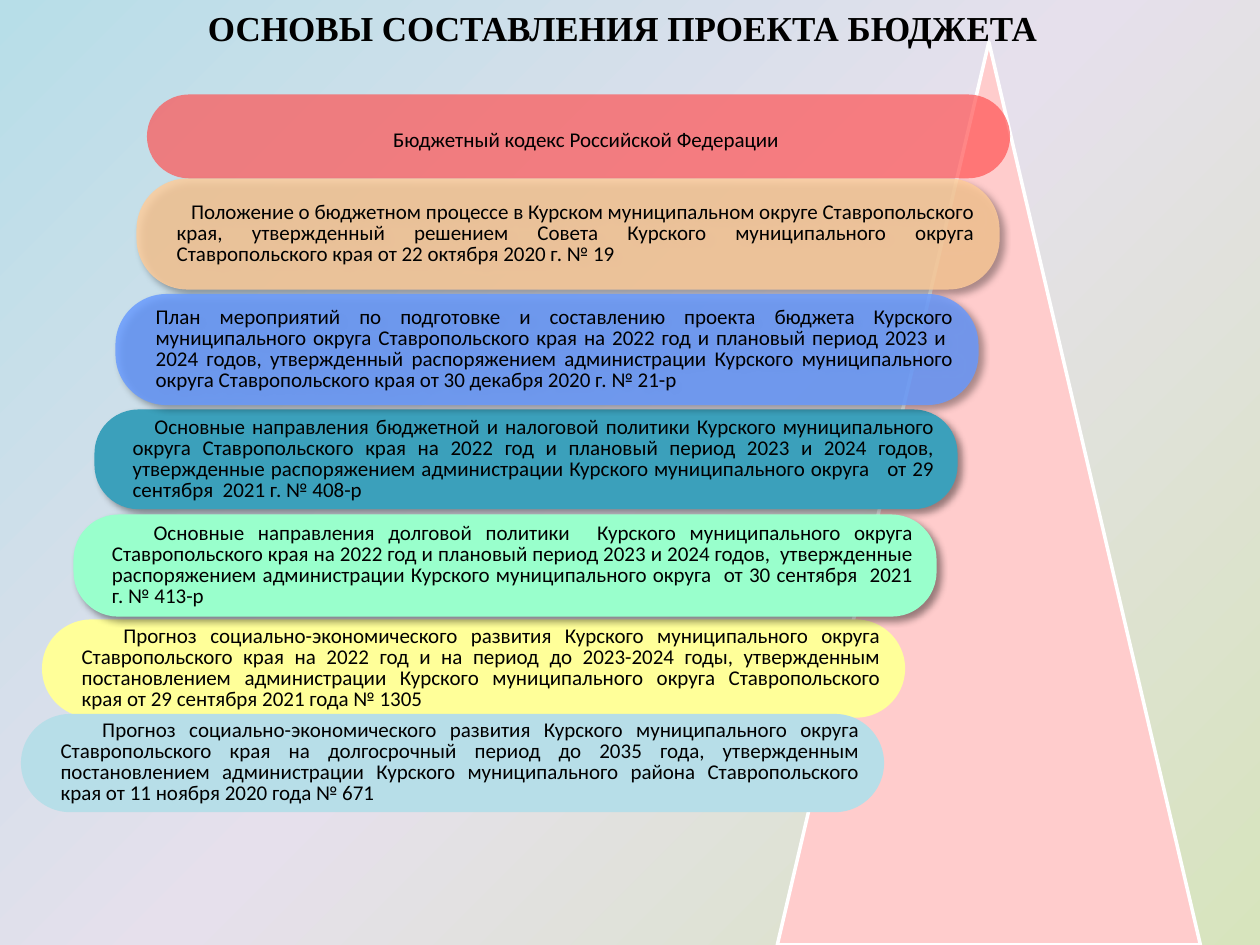
from dataclasses import dataclass

import pptx
import pptx.dml.color
import pptx.enum.shapes
import pptx.enum.text
import pptx.oxml
import pptx.oxml.ns
import pptx.util
from pptx.util import Cm, Pt

ALIGN = pptx.enum.text.PP_ALIGN
ANCHOR = pptx.enum.text.MSO_ANCHOR
SHAPE = pptx.enum.shapes.MSO_SHAPE
GRID = Cm(2.54) / 12


@dataclass(frozen=True)
class Theme:
    title_font: str = "Times New Roman"
    body_font: str = "Calibri"
    title_size: int = 20
    body_size: int = 12
    text: str = "000000"
    triangle: str = "FFCCCC"
    triangle_line: str = "FFFFFF"
    background: tuple = ((0, "D7E4BD"), (50, "E6E0EC"), (100, "B7DEE8"))


@dataclass(frozen=True)
class Bar:
    """Column and row count grid steps; height and indent are in centimetres."""
    column: int
    row: int
    height: float
    rounding: float
    color: str
    text: str
    indent: float = 0.84
    opacity: int = 100
    shadow: bool = False
    align: ALIGN = ALIGN.JUSTIFY
    line_spacing: int = 12


THEME = Theme()

BARS = (
    Bar(4, 59, 1.98, 0.5, "FFFF99",
        "Прогноз социально-экономического развития Курского муниципального округа "
        "Ставропольского края на 2022 год и на период до 2023-2024 годы, утвержденным "
        "постановлением администрации Курского муниципального округа Ставропольского "
        "края от 29 сентября 2021 года № 1305"),
    Bar(13, 17, 2.24, 0.46, "FFCC99",
        "Положение о бюджетном процессе в Курском муниципальном округе Ставропольского "
        "края, утвержденный решением Совета Курского муниципального округа "
        "Ставропольского края от 22 октября 2020 г. № 19",
        indent=0.29, opacity=82, shadow=True),
    Bar(14, 9, 1.69, 0.5, "FF5050", "Бюджетный кодекс Российской Федерации",
        indent=0, opacity=69, align=ALIGN.CENTER, line_spacing=17),
    Bar(9, 39, 2.01, 0.44, "3BA0BB",
        "Основные направления бюджетной и налоговой политики Курского муниципального "
        "округа Ставропольского края на 2022 год и плановый период 2023 и 2024 годов, "
        "утвержденные распоряжением администрации Курского муниципального округа   "
        "от 29 сентября  2021 г. № 408-р",
        indent=0.44, shadow=True),
    Bar(7, 49, 2.06, 0.44, "99FFCC",
        "Основные направления долговой политики  Курского муниципального округа "
        "Ставропольского края на 2022 год и плановый период 2023 и 2024 годов,  "
        "утвержденные распоряжением администрации Курского муниципального округа  "
        "от 30 сентября  2021 г. № 413-р",
        shadow=True),
    Bar(11, 28, 2.24, 0.46, "6699FF",
        "План мероприятий по подготовке и составлению проекта бюджета Курского "
        "муниципального округа Ставропольского края на 2022 год и плановый период "
        "2023 и  2024 годов, утвержденный распоряжением администрации Курского "
        "муниципального округа Ставропольского края от 30 декабря 2020 г. № 21-р",
        indent=0, opacity=82, shadow=True),
    Bar(2, 68, 1.98, 0.5, "B7DEE8",
        "Прогноз социально-экономического развития Курского муниципального округа "
        "Ставропольского края на долгосрочный период до 2035 года, утвержденным "
        "постановлением администрации Курского муниципального района Ставропольского "
        "края от 11 ноября 2020 года № 671"),
)


def rgb(color):
    return pptx.dml.color.RGBColor.from_string(color)


def xml(text):
    namespaces = pptx.oxml.ns.nsdecls("a", "p")
    return pptx.oxml.parse_xml(text.replace(" NS", " " + namespaces, 1))


def set_background(slide):
    stops = "".join(
        f'<a:gs pos="{position * 1000}"><a:srgbClr val="{color}"/></a:gs>'
        for position, color in THEME.background)
    background = xml(
        f'<p:bg NS><p:bgPr><a:gradFill rotWithShape="1"><a:gsLst>{stops}</a:gsLst>'
        '<a:path path="circle"><a:fillToRect l="100000" t="100000"/></a:path>'
        '</a:gradFill><a:effectLst/></p:bgPr></p:bg>')
    slide.element.find(pptx.oxml.ns.qn("p:cSld")).insert(0, background)


def format_paragraph(paragraph, font_name, size, align, bold=False):
    paragraph.alignment = align
    paragraph.font.name = font_name
    paragraph.font.size = Pt(size)
    paragraph.font.bold = bold
    paragraph.font.color.rgb = rgb(THEME.text)


def set_title(slide, text):
    title = slide.shapes.title
    title.left, title.top, title.width, title.height = Cm(2.75), Cm(0), Cm(19.6), Cm(1.11)
    frame = title.text_frame
    frame.text = text
    frame.word_wrap = True
    frame.vertical_anchor = ANCHOR.TOP
    format_paragraph(frame.paragraphs[0], THEME.title_font, THEME.title_size,
                     ALIGN.CENTER, bold=True)


def add_filled_shape(slide, kind, left, top, width, height, color):
    shape = slide.shapes.add_shape(kind, int(left), int(top), width, height)
    shape.shadow.inherit = False
    shape.fill.solid()
    shape.fill.fore_color.rgb = rgb(color)
    shape.line.fill.background()
    return shape


def add_triangle(slide):
    triangle = add_filled_shape(slide, SHAPE.ISOSCELES_TRIANGLE, Cm(15.67), Cm(0.85),
                                Cm(8.53), Cm(18.2), THEME.triangle)
    triangle.line.color.rgb = rgb(THEME.triangle_line)
    triangle.line.width = Pt(2)
    # The title lies in front of the tip.
    triangle.element.addnext(slide.shapes.title.element)


def set_opacity(shape, percent):
    color = shape.element.spPr.find(".//" + pptx.oxml.ns.qn("a:srgbClr"))
    color.append(xml(f'<a:alpha NS val="{percent * 1000}"/>'))


def add_shadow(shape):
    effects = shape.element.spPr.find(pptx.oxml.ns.qn("a:effectLst"))
    effects.append(xml(
        f'<a:outerShdw NS blurRad="{Pt(4)}" dist="{Pt(3)}" dir="2700000" algn="tl" '
        'rotWithShape="0"><a:srgbClr val="000000"><a:alpha val="40000"/></a:srgbClr>'
        '</a:outerShdw>'))


def add_bar(slide, bar):
    shape = add_filled_shape(slide, SHAPE.ROUNDED_RECTANGLE, bar.column * GRID,
                             bar.row * GRID, Cm(17.4), Cm(bar.height), bar.color)
    shape.adjustments[0] = bar.rounding
    if bar.opacity < 100:
        set_opacity(shape, bar.opacity)
    if bar.shadow:
        add_shadow(shape)
    frame = shape.text_frame
    frame.text = bar.text
    frame.word_wrap = True
    frame.vertical_anchor = ANCHOR.MIDDLE
    frame.margin_left, frame.margin_right = Cm(0.51), Cm(0.2)
    frame.margin_top = frame.margin_bottom = Cm(0.13)
    paragraph = frame.paragraphs[0]
    format_paragraph(paragraph, THEME.body_font, THEME.body_size, bar.align)
    paragraph.line_spacing = Pt(bar.line_spacing)
    if bar.indent:
        paragraph._p.get_or_add_pPr().set("indent", str(Cm(bar.indent)))


def main():
    presentation = pptx.Presentation()
    presentation.slide_width, presentation.slide_height = Cm(25.4), Cm(19.05)
    slide = presentation.slides.add_slide(presentation.slide_layouts[5])
    set_background(slide)
    set_title(slide, "ОСНОВЫ СОСТАВЛЕНИЯ ПРОЕКТА БЮДЖЕТА")
    add_triangle(slide)
    for bar in BARS:
        add_bar(slide, bar)
    presentation.save("out.pptx")


if __name__ == "__main__":
    main()
